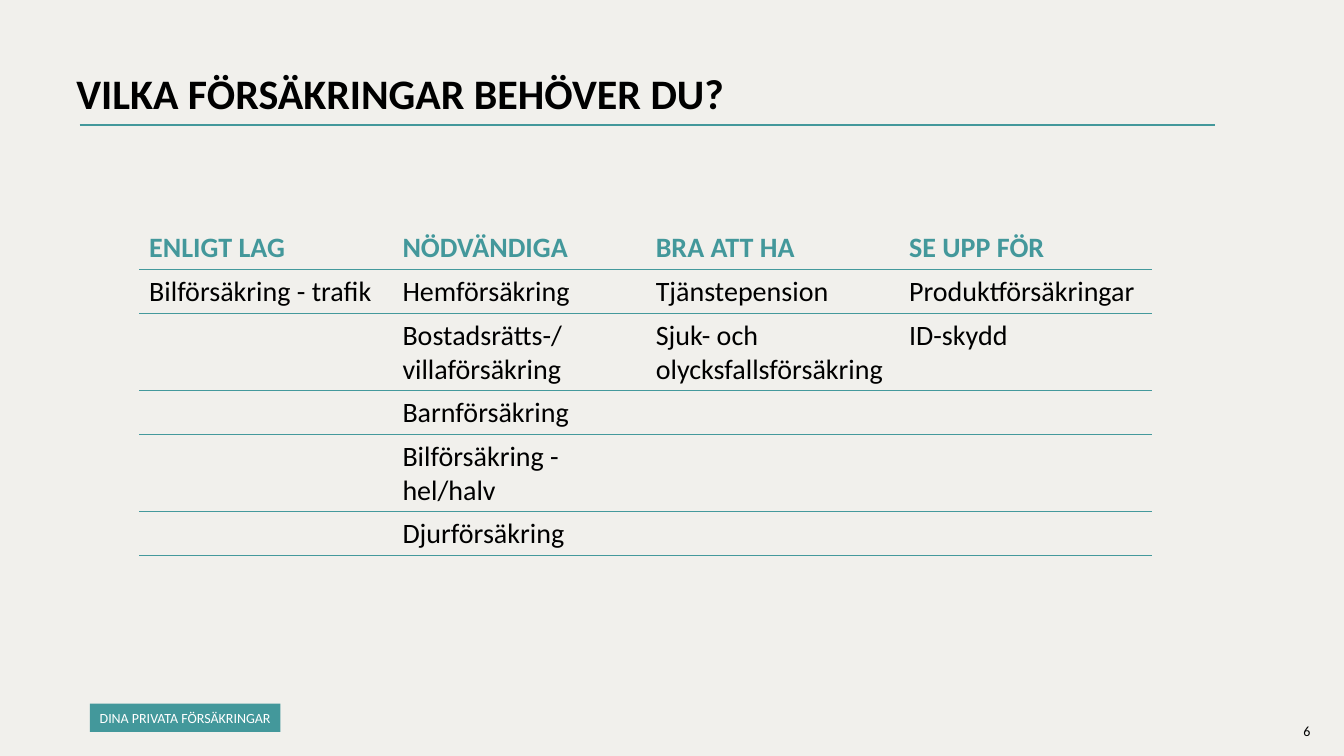
from lxml import etree
from pptx import Presentation
from pptx.dml.color import RGBColor
from pptx.enum import shapes, text
from pptx.oxml import ns
from pptx.util import Inches, Pt


def color(code):
    return RGBColor.from_string(code)


class Deck:
    font = "Calibri"
    teal = "43989B"
    rule = "44999C"
    black = "000000"
    white = "FFFFFF"
    paper = "F1F0EC"

    def __init__(self):
        self.prs = Presentation()
        self.prs.slide_width = Inches(13.33)
        self.prs.slide_height = Inches(7.5)
        self.slide = self.prs.slides.add_slide(self.prs.slide_layouts[6])
        fill = self.slide.background.fill
        fill.solid()
        fill.fore_color.rgb = color(self.paper)

    def put(self, frame, words, size, tint, bold=False, gap=1.0):
        para = frame.paragraphs[0]
        para.alignment = text.PP_ALIGN.LEFT
        para.line_spacing = gap
        para.font.size = Pt(size)
        if words:
            run = para.add_run()
            run.text = words
            run.font.name = self.font
            run.font.size = Pt(size)
            run.font.bold = bold
            run.font.color.rgb = color(tint)

    def label(self, box, words, size, bold=False, gap=1.0):
        frame = self.slide.shapes.add_textbox(*map(Inches, box)).text_frame
        frame.word_wrap = True
        self.put(frame, words, size, self.black, bold, gap)

    def line(self, left, right, top):
        link = self.slide.shapes.add_connector(
            shapes.MSO_CONNECTOR.STRAIGHT,
            Inches(left), Inches(top), Inches(right), Inches(top))
        link.line.color.rgb = color(self.teal)
        link.line.width = Pt(1.5)
        etree.SubElement(link._element.spPr, ns.qn("a:effectLst"))

    def tag(self, box, words):
        shape = self.slide.shapes.add_shape(
            shapes.MSO_SHAPE.RECTANGLE, *map(Inches, box))
        shape.shadow.inherit = False
        shape.fill.solid()
        shape.fill.fore_color.rgb = color(self.teal)
        shape.line.fill.background()
        frame = shape.text_frame
        frame.word_wrap = False
        frame.vertical_anchor = text.MSO_ANCHOR.MIDDLE
        frame.margin_left, frame.margin_top = Inches(0.1), Inches(0.08)
        frame.margin_right, frame.margin_bottom = Inches(0.04), Inches(0.05)
        self.put(frame, words, 10, self.white, gap=0.9)

    def border(self, cell, side, width):
        props = cell._tc.get_or_add_tcPr()
        edge = etree.SubElement(props, ns.qn("a:ln" + side), w=str(Pt(width)))
        if width:
            fill = etree.SubElement(edge, ns.qn("a:solidFill"))
            etree.SubElement(fill, ns.qn("a:srgbClr"), val=self.rule)
        else:
            etree.SubElement(edge, ns.qn("a:noFill"))

    def table(self, box, rows, highs):
        grid = self.slide.shapes.add_table(
            len(rows), len(rows[0]), *map(Inches, box)).table
        grid.first_row = grid.horz_banding = False
        for i, (row, high) in enumerate(zip(rows, highs)):
            grid.rows[i].height = Inches(high)
            above = (0, 1)[i] if i < 2 else 0.5
            below = 0.5 if i else 1
            for j, words in enumerate(row):
                cell = grid.cell(i, j)
                for side, width in zip("LRTB", (0, 0, above, below)):
                    self.border(cell, side, width)
                cell.fill.background()
                tint = self.black if i else self.teal
                self.put(cell.text_frame, words, 20, tint, i == 0)


def main():
    deck = Deck()
    deck.label((12.83, 7.12, 0.4, 0.27), "6", 10)
    deck.line(0.79, 12.05, 1.24)
    deck.label((0.66, 0.68, 11.5, 1.45), "VILKA FÖRSÄKRINGAR BEHÖVER DU?",
               30, True, 0.9)
    rows = [
        ("ENLIGT LAG", "NÖDVÄNDIGA", "BRA ATT HA", "SE UPP FÖR"),
        ("Bilförsäkring - trafik", "Hemförsäkring", "Tjänstepension",
         "Produktförsäkringar"),
        ("", "Bostadsrätts-/villaförsäkring",
         "Sjuk- och olycksfallsförsäkring", "ID-skydd"),
        ("", "Barnförsäkring", "", ""),
        ("", "Bilförsäkring - hel/halv", "", ""),
        ("", "Djurförsäkring", "", ""),
    ]
    deck.table((1.38, 2.24, 10.05, 3.27), rows,
               (0.41, 0.3, 0.41, 0.41, 0.41, 0.41))
    deck.tag((0.89, 6.98, 1.89, 0.28), "DINA PRIVATA FÖRSÄKRINGAR")
    deck.prs.save("out.pptx")


if __name__ == "__main__":
    main()
